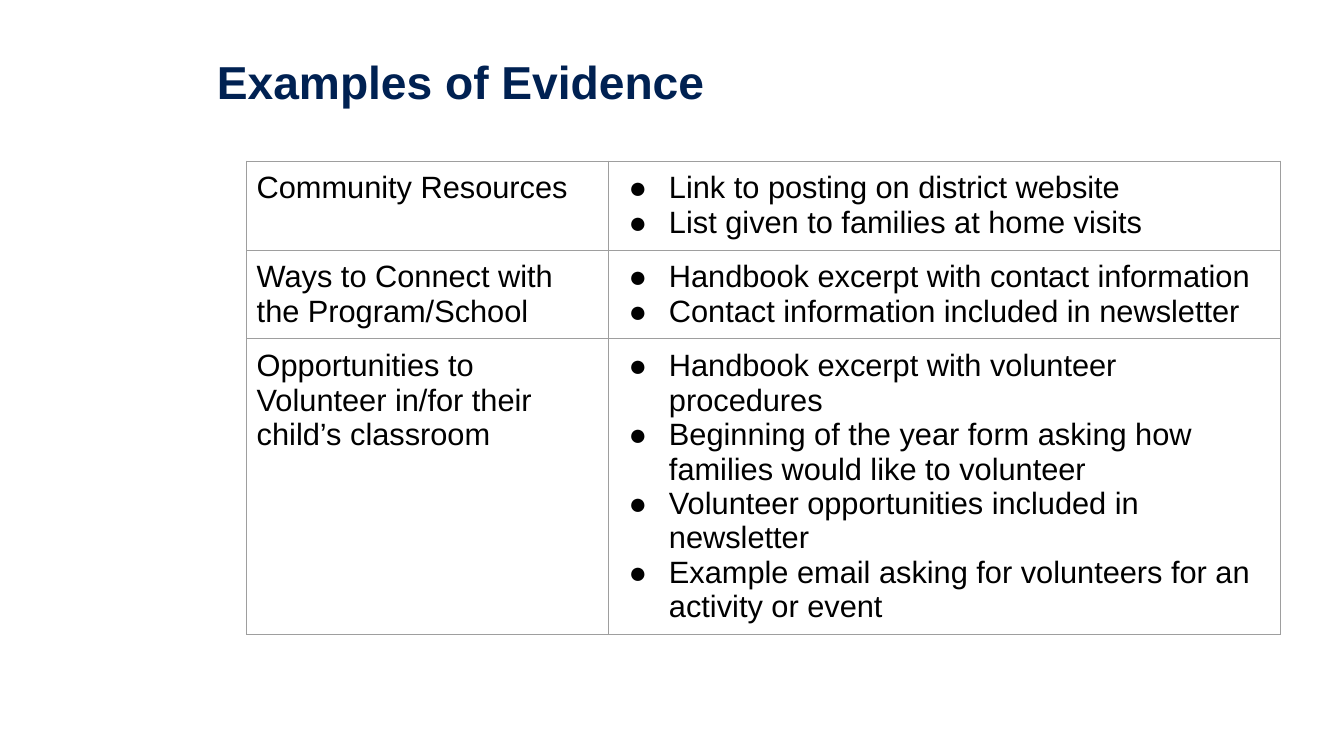
from dataclasses import dataclass

import lxml.etree
import pptx
import pptx.dml.color
import pptx.enum.text
import pptx.oxml.ns
import pptx.util
from pptx.util import Cm


@dataclass(frozen=True)
class Theme:
    font: str = "Arial"
    heading: str = "002152"
    body: str = "000000"
    grid: str = "9E9E9E"
    heading_size: int = 33
    body_size: int = 22
    grid_width: float = 0.75


THEME = Theme()
CELL_MARGIN = Cm(0.25)
BULLET_INDENT = Cm(1.27)
BULLET_HANG = Cm(1.02)
COLUMN_WIDTHS = (9.12, 16.92)
ROW_HEIGHTS = (2.24, 2.24, 7.43)
EVIDENCE = (
    ("Community Resources", (
        "Link to posting on district website",
        "List given to families at home visits",
    )),
    ("Ways to Connect with the Program/School", (
        "Handbook excerpt with contact information",
        "Contact information included in newsletter",
    )),
    ("Opportunities to Volunteer in/for their child’s classroom", (
        "Handbook excerpt with volunteer procedures",
        "Beginning of the year form asking how families would like to volunteer",
        "Volunteer opportunities included in newsletter",
        "Example email asking for volunteers for an activity or event",
    )),
)


def add_element(parent, tag, **attributes):
    return lxml.etree.SubElement(parent, pptx.oxml.ns.qn(tag), attributes)


def style_font(paragraph, size, color, bold=False):
    paragraph.font.name = THEME.font
    paragraph.font.size = pptx.util.Pt(size)
    paragraph.font.bold = bold
    paragraph.font.color.rgb = pptx.dml.color.RGBColor.from_string(color)


def add_bullet(paragraph):
    properties = paragraph._p.get_or_add_pPr()
    properties.set("marL", str(BULLET_INDENT))
    properties.set("indent", str(-BULLET_HANG))
    bullet_color = add_element(properties, "a:buClr")
    add_element(bullet_color, "a:srgbClr", val=THEME.body)
    add_element(properties, "a:buFont", typeface=THEME.font)
    add_element(properties, "a:buChar", char="●")


def add_borders(cell):
    properties = cell._tc.get_or_add_tcPr()
    width = str(pptx.util.Pt(THEME.grid_width))
    for side in ("L", "R", "T", "B"):
        border = add_element(properties, f"a:ln{side}", w=width)
        border_fill = add_element(border, "a:solidFill")
        add_element(border_fill, "a:srgbClr", val=THEME.grid)


def fill_cell(cell, lines, bulleted):
    add_borders(cell)
    cell.fill.background()
    cell.margin_left = cell.margin_right = CELL_MARGIN
    cell.margin_top = cell.margin_bottom = CELL_MARGIN
    cell.text = "\n".join(lines)
    for paragraph in cell.text_frame.paragraphs:
        if bulleted:
            add_bullet(paragraph)
        style_font(paragraph, THEME.body_size, THEME.body)


def set_heading(slide, text):
    heading = slide.shapes.title
    heading.left, heading.top = Cm(5.21), Cm(0.51)
    heading.width, heading.height = Cm(26.26), Cm(3.25)
    frame = heading.text_frame
    frame.text = text
    frame.auto_size = pptx.enum.text.MSO_AUTO_SIZE.NONE
    frame.vertical_anchor = pptx.enum.text.MSO_ANCHOR.MIDDLE
    paragraph = frame.paragraphs[0]
    paragraph.alignment = pptx.enum.text.PP_ALIGN.LEFT
    paragraph.line_spacing = 0.9
    style_font(paragraph, THEME.heading_size, THEME.heading, bold=True)


def add_evidence_table(slide):
    table = slide.shapes.add_table(
        len(EVIDENCE), len(COLUMN_WIDTHS), Cm(6.22), Cm(4.06),
        Cm(sum(COLUMN_WIDTHS)), Cm(sum(ROW_HEIGHTS)),
    ).table
    table.first_row = table.horz_banding = False
    for column, width in zip(table.columns, COLUMN_WIDTHS):
        column.width = Cm(width)
    for row, height, (topic, examples) in zip(table.rows, ROW_HEIGHTS, EVIDENCE):
        row.height = Cm(height)
        fill_cell(row.cells[0], [topic], bulleted=False)
        fill_cell(row.cells[1], examples, bulleted=True)


def main():
    presentation = pptx.Presentation()
    presentation.slide_width = Cm(33.87)
    presentation.slide_height = Cm(19.05)
    slide = presentation.slides.add_slide(presentation.slide_layouts.get_by_name("Title Only"))
    set_heading(slide, "Examples of Evidence")
    add_evidence_table(slide)
    presentation.save("out.pptx")


if __name__ == "__main__":
    main()
